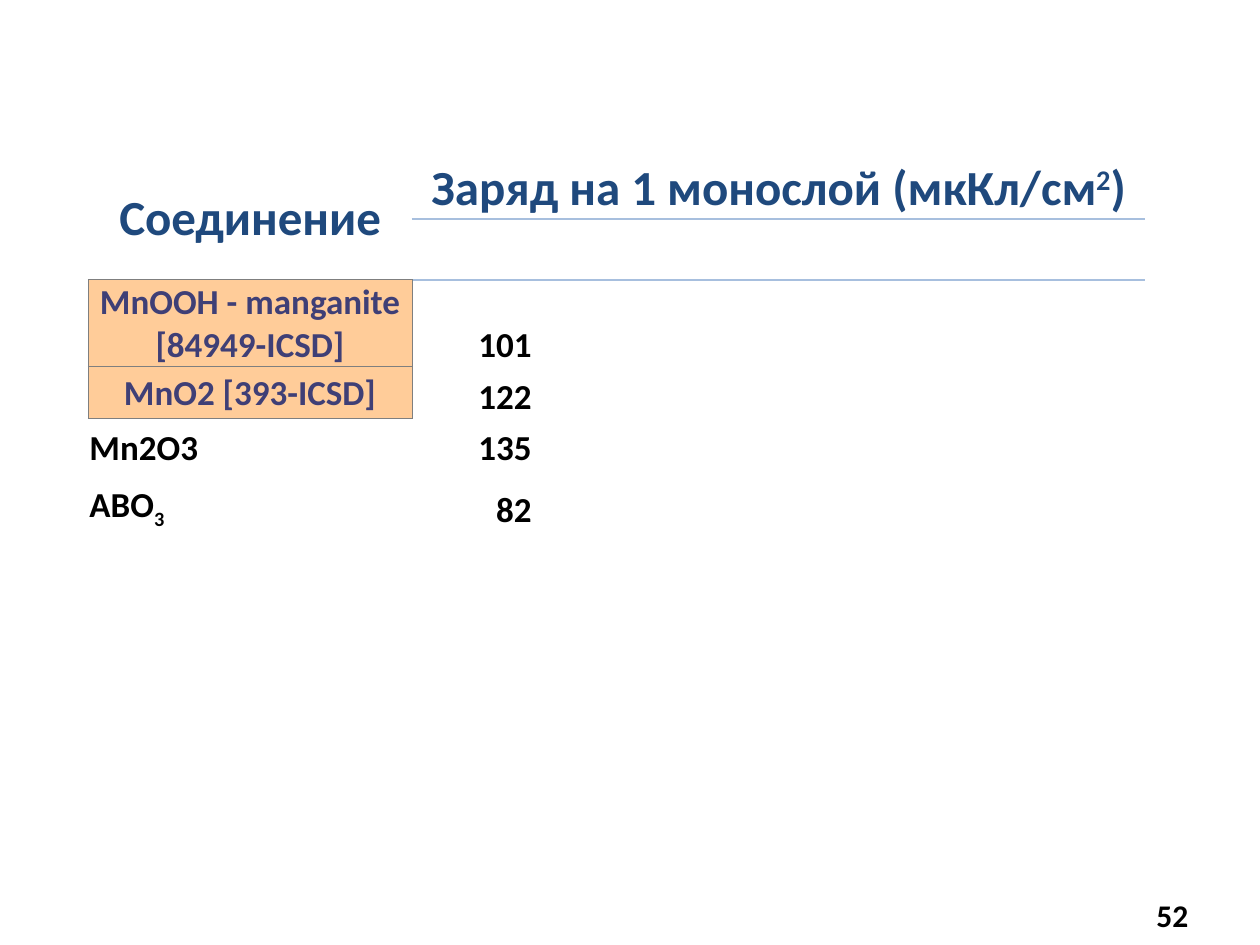
from lxml import etree
from pptx import Presentation
from pptx.dml.color import RGBColor
from pptx.enum.text import MSO_ANCHOR as Anchor, PP_ALIGN as Align
from pptx.oxml.ns import qn
from pptx.util import Inches, Pt

NAVY, PURPLE, BLACK = "1F497D", "3F3F76", "000000"
PEACH, GREY, PALE_BLUE = "FFCC99", "7F7F7F", "A7BFDE"
NO_STYLE = "{2D5ABB26-0587-4C30-8999-92F81FD0307C}"

HEADERS = [
    [("Соединение", 0)],
    [("Заряд на 1 монослой (мкКл/см", 0), ("2", 30), (")", 0)],
]
COMPOUNDS = [
    ([("MnOOH - manganite [84949-ICSD]", 0)], "101", True),
    ([("MnO2 [393-ICSD]", 0)], "122", True),
    ([("Mn2O3", 0)], "135", False),
    ([("ABO", 0), ("3", -25)], "82", False),
]
COLUMN_WIDTHS = [2.57, 0.96] + [0.81] * 6
ROW_HEIGHTS = [0.47, 0.45, 0.69, 0.41, 0.41, 0.49]


def rgb(value):
    return RGBColor.from_string(value)


def write(frame, spans, size, color, align):
    para = frame.paragraphs[0]
    para.alignment = align
    for text, baseline in spans:
        span = para.add_run()
        span.text = text
        span.font.name = "Calibri"
        span.font.size = Pt(size)
        span.font.bold = True
        span.font.color.rgb = rgb(color)
        if baseline:
            span._r.get_or_add_rPr().set("baseline", str(baseline * 1000))


def add_borders(cell, sides, color, width):
    properties = cell._tc.get_or_add_tcPr()
    for side in sides:
        line = etree.SubElement(properties, qn(f"a:ln{side}"), w=str(Pt(width)))
        fill = etree.SubElement(line, qn("a:solidFill"))
        etree.SubElement(fill, qn("a:srgbClr"), val=color)


deck = Presentation()
deck.slide_width, deck.slide_height = Inches(10), Inches(7.5)
page = deck.slides.add_slide(deck.slide_layouts[6])

table = page.shapes.add_table(
    len(ROW_HEIGHTS), len(COLUMN_WIDTHS), Inches(0.7), Inches(1.25),
    Inches(sum(COLUMN_WIDTHS)), Inches(sum(ROW_HEIGHTS)),
).table
table.first_row = table.horz_banding = False
table._tbl.tblPr.find(qn("a:tableStyleId")).text = NO_STYLE
for column, width in zip(table.columns, COLUMN_WIDTHS):
    column.width = Inches(width)
for row, height in zip(table.rows, ROW_HEIGHTS):
    row.height = Inches(height)

table.cell(0, 0).merge(table.cell(1, 0))
table.cell(0, 1).merge(table.cell(0, len(COLUMN_WIDTHS) - 1))
for column in range(1, len(COLUMN_WIDTHS)):
    add_borders(table.cell(0, column), "B", PALE_BLUE, 1.5)
    add_borders(table.cell(1, column), "T", PALE_BLUE, 1.5)
for index, (name, charge, boxed) in enumerate(COMPOUNDS):
    if boxed:
        add_borders(table.cell(index + 2, 0), "LRTB", GREY, 0.5)

for cell in table.iter_cells():
    cell.margin_left = cell.margin_right = cell.margin_top = Inches(0.01)
    cell.margin_bottom = 0
    cell.vertical_anchor = Anchor.BOTTOM
    cell.fill.background()

for column, spans in enumerate(HEADERS):
    header = table.cell(0, column)
    header.vertical_anchor = Anchor.MIDDLE
    write(header.text_frame, spans, 28, NAVY, Align.CENTER)

for index, (name, charge, boxed) in enumerate(COMPOUNDS, start=2):
    label = table.cell(index, 0)
    if boxed:
        label.vertical_anchor = Anchor.MIDDLE
        label.fill.solid()
        label.fill.fore_color.rgb = rgb(PEACH)
        write(label.text_frame, name, 20, PURPLE, Align.CENTER)
    else:
        write(label.text_frame, name, 20, BLACK, Align.LEFT)
    write(table.cell(index, 1).text_frame, [(charge, 0)], 20, BLACK, Align.RIGHT)

number = page.shapes.add_textbox(Inches(7.2), Inches(7.06), Inches(2.33), Inches(0.4))
number.text_frame.word_wrap = True
number.text_frame.vertical_anchor = Anchor.MIDDLE
write(number.text_frame, [("52", 0)], 18, BLACK, Align.RIGHT)

deck.save("out.pptx")
